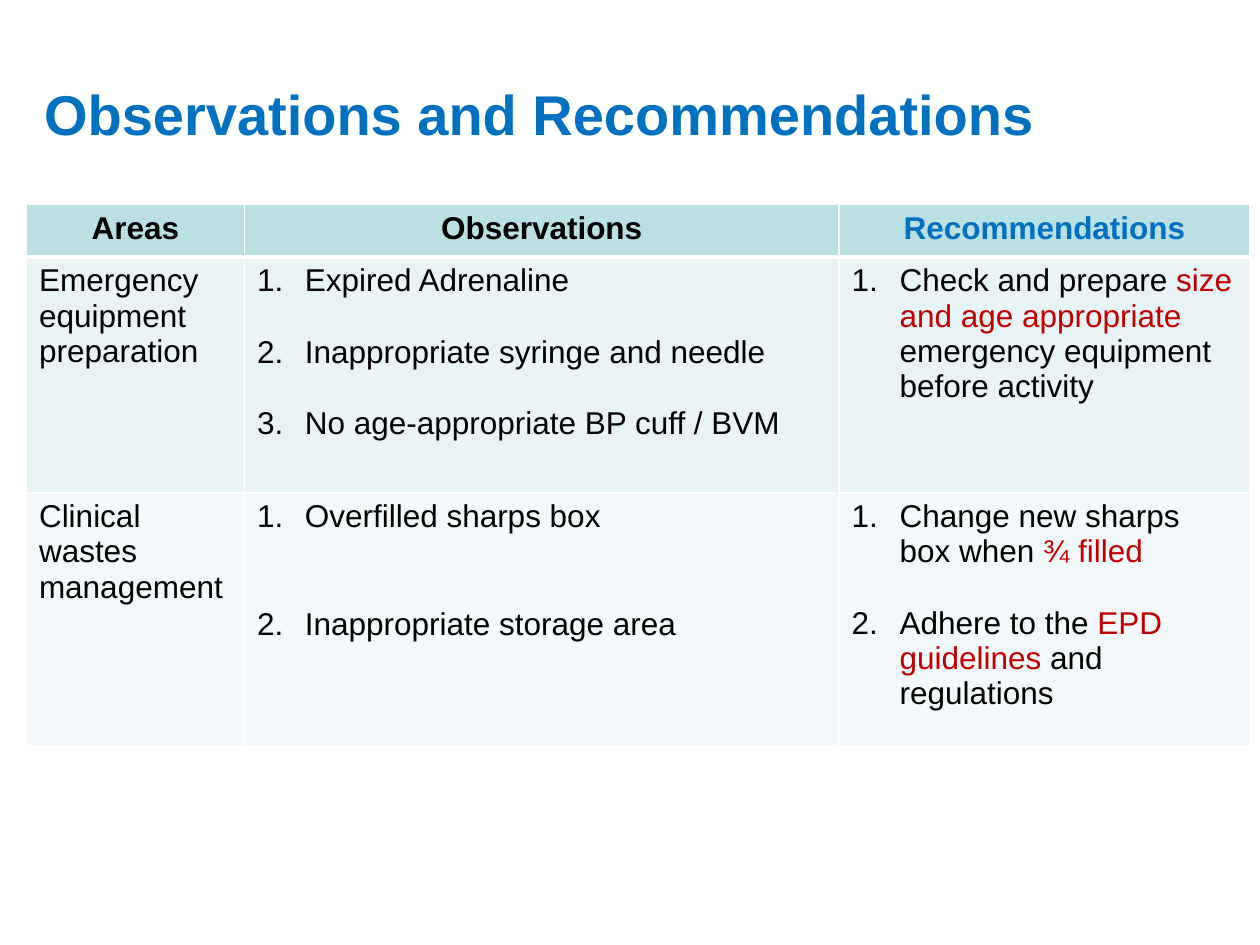
"""Build the Observations and Recommendations slide with its table of areas."""
from lxml.etree import SubElement
from pptx import Presentation
from pptx.dml.color import RGBColor as RGB
from pptx.enum.text import MSO_ANCHOR as Anchor, PP_ALIGN as Align
from pptx.oxml import parse_xml
from pptx.oxml.ns import nsdecls, qn
from pptx.util import Inches, Pt

THEME = {
    "font": "Arial", "title_size": 32, "body_size": 18, "line_gap": 20.7,
    "blue": "0070C0", "red": "C00000", "black": "000000", "border": "FFFFFF",
    "fills": ["BBE0E3", "E7F3F4", "F3F9FA"],
}


def add_run(p, text, size, color, bold=False):
    r = p.add_run()
    r.text = text
    formats = {"name": THEME["font"], "size": Pt(size), "bold": bold}
    for name, value in formats.items():
        setattr(r.font, name, value)
    r.font.color.rgb = RGB.from_string(THEME[color])


def set_borders(cell, widths):
    for i, (side, width) in enumerate(widths.items()):
        cell._tc.get_or_add_tcPr().insert(i, parse_xml(
            f'<a:ln{side} {nsdecls("a")} w="{Pt(width)}"><a:solidFill>'
            f'<a:srgbClr val="{THEME["border"]}"/></a:solidFill></a:ln{side}>'))


prs = Presentation()
prs.slide_width, prs.slide_height = Inches(10), Inches(7.5)
s = prs.slides.add_slide(prs.slide_layouts[5])

title = s.shapes.title
box = {"left": 0.25, "top": 0.56, "width": 9.63, "height": 0.68}
for name, value in box.items():
    setattr(title, name, Inches(value))
tf = title.text_frame
tf.vertical_anchor = Anchor.MIDDLE
p = tf.paragraphs[0]
p.alignment = Align.LEFT
add_run(p, "Observations and Recommendations", THEME["title_size"], "blue", True)

headers = [("Areas", "black"), ("Observations", "black"), ("Recommendations", "blue")]
rows = [
    ("Emergency equipment preparation", 1,
     [[("Expired Adrenaline", "black")],
      [("Inappropriate syringe and needle", "black")],
      [("No age-appropriate BP cuff / BVM", "black")]],
     [[("Check and prepare ", "black"), ("size and age appropriate ", "red"),
       ("emergency equipment before activity", "black")]]),
    ("Clinical wastes management", 2,
     [[("Overfilled sharps box", "black")],
      [("Inappropriate storage area", "black")]],
     [[("Change new sharps box when ", "black"), ("¾ filled", "red")],
      [("Adhere to the ", "black"), ("EPD guidelines", "red"),
       (" and regulations", "black")]]),
]
col_widths = [1.73, 4.72, 3.26]
row_heights = [0.42, 1.87, 2.01]

table = s.shapes.add_table(
    len(row_heights), len(col_widths), Inches(0.21), Inches(1.62),
    Inches(sum(col_widths)), Inches(sum(row_heights))).table
table.first_row = table.horz_banding = False
for col, width in zip(table.columns, col_widths):
    col.width = Inches(width)
for i, (row, height) in enumerate(zip(table.rows, row_heights)):
    row.height = Inches(height)
    for cell in row.cells:
        cell.fill.solid()
        cell.fill.fore_color.rgb = RGB.from_string(THEME["fills"][i])
        set_borders(cell, {"L": 1, "R": 1, "T": 3 if i == 1 else 1,
                           "B": 3 if i == 0 else 1})

size = THEME["body_size"]
for c, (text, color) in enumerate(headers):
    p = table.cell(0, c).text_frame.paragraphs[0]
    p.alignment = Align.CENTER
    add_run(p, text, size, color, True)

for i, (area, gap_lines, observations, recommendations) in enumerate(rows, 1):
    add_run(table.cell(i, 0).text_frame.paragraphs[0], area, size, "black")
    for c, items, gap in [(1, observations, gap_lines), (2, recommendations, 1)]:
        tf = table.cell(i, c).text_frame
        for n, runs in enumerate(items):
            p = tf.add_paragraph() if n else tf.paragraphs[0]
            pPr = p._p.get_or_add_pPr()
            pPr.set("marL", str(Inches(0.38)))
            pPr.set("indent", str(Inches(-0.38)))
            SubElement(pPr, qn("a:buFont"), typeface="+mj-lt")
            SubElement(pPr, qn("a:buAutoNum"), type="arabicPeriod")
            if n:
                p.space_before = Pt(gap * THEME["line_gap"])
            for text, color in runs:
                add_run(p, text, size, color)

prs.save("out.pptx")
